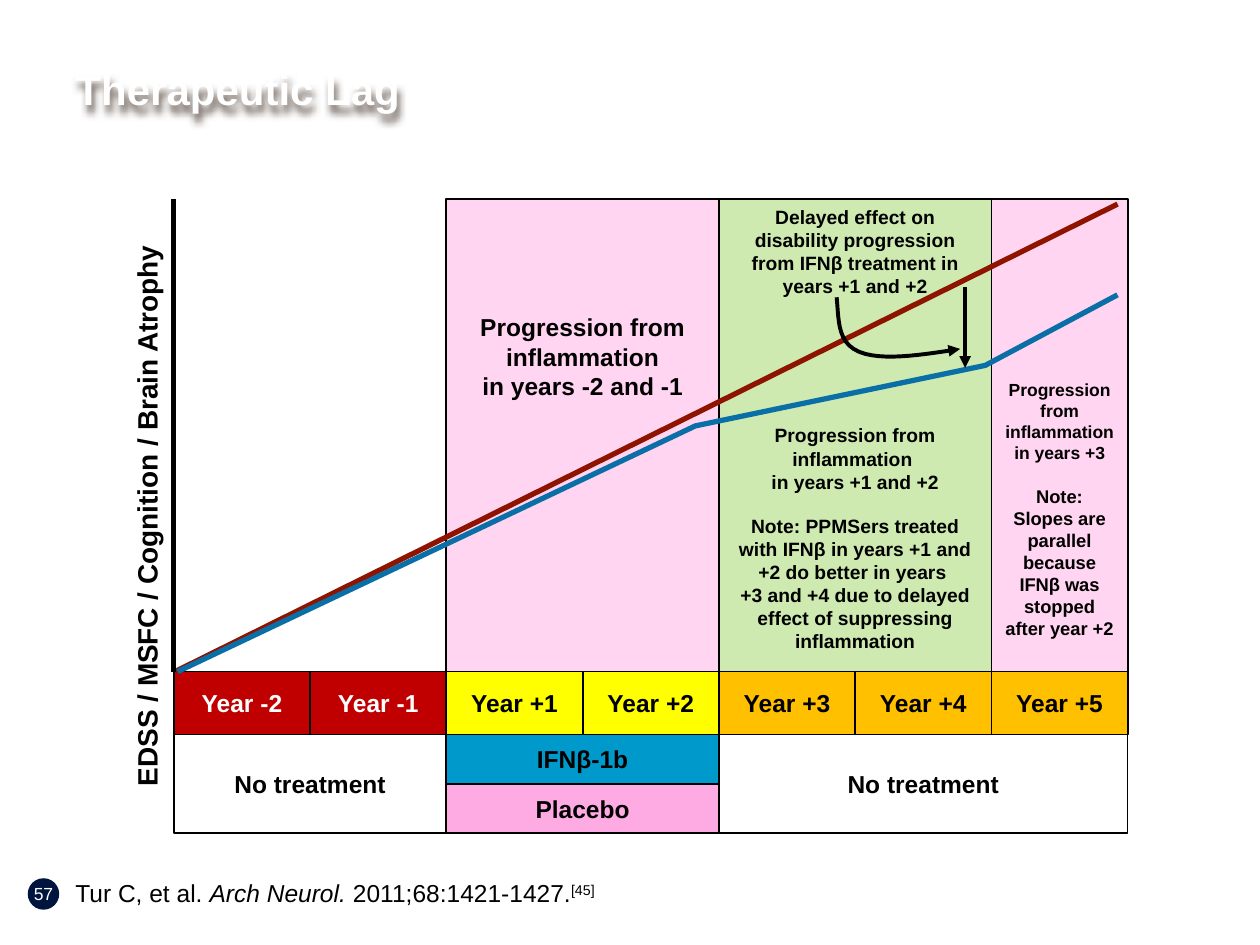
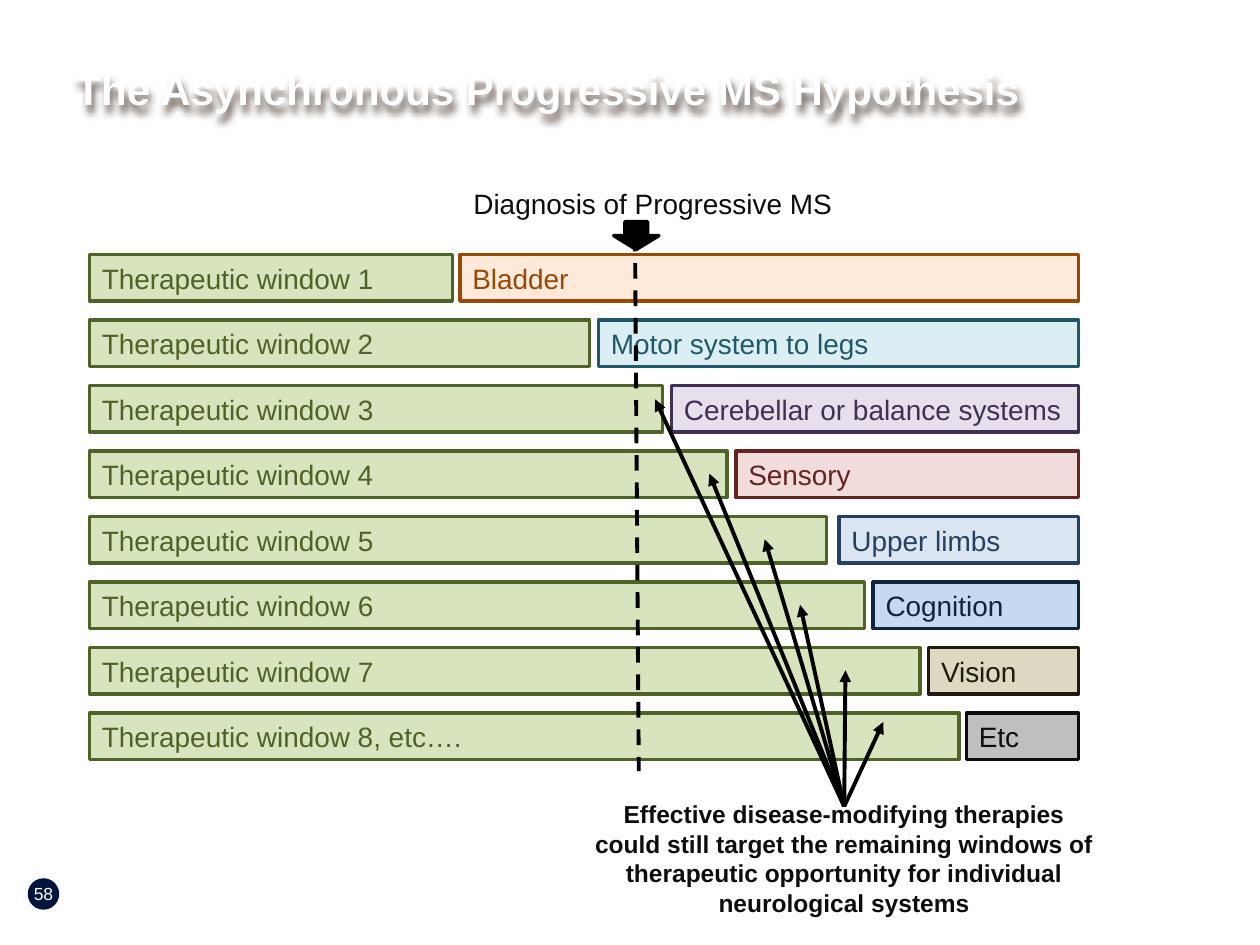
from dataclasses import dataclass

from lxml import etree
from pptx import Presentation
from pptx.dml.color import RGBColor
from pptx.enum.dml import MSO_LINE
from pptx.enum.shapes import MSO_CONNECTOR, MSO_SHAPE
from pptx.enum.text import MSO_ANCHOR, PP_ALIGN
from pptx.oxml.ns import qn
from pptx.util import Inches, Pt

RECTANGLE, OVAL, DOWN_ARROW = MSO_SHAPE.RECTANGLE, MSO_SHAPE.OVAL, MSO_SHAPE.DOWN_ARROW
STRAIGHT = MSO_CONNECTOR.STRAIGHT
DASH = MSO_LINE.DASH
LEFT, CENTER = PP_ALIGN.LEFT, PP_ALIGN.CENTER
TOP, MIDDLE = MSO_ANCHOR.TOP, MSO_ANCHOR.MIDDLE
TITLE_ONLY = 5


@dataclass(frozen=True)
class Theme:
    font: str = "Arial"
    black: str = "000000"
    white: str = "FFFFFF"
    ink: str = "0D0D0D"
    badge: str = "00153E"
    title_shadow: str = "4A3A30"
    before: str = "C00000"
    treated: str = "FFFF00"
    after: str = "FFC000"
    interferon: str = "0099CC"
    placebo: str = "FFABE3"
    inflammation: str = "FFD5F1"
    delayed: str = "CEEAB0"
    untreated_course: str = "8E1400"
    treated_course: str = "0A6FA7"
    window_fill: str = "D7E4BD"
    window_edge: str = "4F6228"
    title_size: float = 24
    large: float = 16
    medium: float = 14
    note: float = 11
    narrow_note: float = 10.5
    small: float = 10
    arrow_width: float = 2.25
    course_width: float = 3


THEME = Theme()

AXIS_LEFT, CHART_TOP, YEARS_TOP = 1.38, 1.58, 5.33
YEAR_WIDTH = 7.57 / 7
YEAR_HEIGHT, TREATMENT_HEIGHT = 0.5, 0.78
YEARS = [("Year -2", THEME.before), ("Year -1", THEME.before),
         ("Year +1", THEME.treated), ("Year +2", THEME.treated),
         ("Year +3", THEME.after), ("Year +4", THEME.after), ("Year +5", THEME.after)]

WINDOW_LEFT, SYSTEM_RIGHT = 0.71, 8.56
ROW_TOP, ROW_STEP, ROW_HEIGHT = 2.02, 0.52, 0.37
WINDOWS = [
    ("Therapeutic window 1", 2.88, "Bladder", 3.65, "FDEADA", "984807"),
    ("Therapeutic window 2", 3.97, "Motor system to legs", 4.75, "DBEEF4", "215968"),
    ("Therapeutic window 3", 4.55, "Cerebellar or balance systems", 5.33, "E6E0EC", "403152"),
    ("Therapeutic window 4", 5.06, "Sensory", 5.84, "F2DCDB", "632523"),
    ("Therapeutic window 5", 5.85, "Upper limbs", 6.66, "DCE6F2", "254061"),
    ("Therapeutic window 6", 6.15, "Cognition", 6.93, "C6D9F1", "0F243E"),
    ("Therapeutic window 7", 6.59, "Vision", 7.37, "DDD9C3", "1E1C11"),
    ("Therapeutic window 8, etc….", 6.9, "Etc", 7.67, "BFBFBF", "0D0D0D"),
]
THERAPY_ORIGIN = (6.7, 6.4)
THERAPY_TARGETS = [(5.2, 3.17), (5.63, 3.76), (6.07, 4.28),
                   (6.35, 4.8), (6.71, 5.32), (7.01, 5.73)]


def rgb(value):
    return RGBColor.from_string(value)


def add_run(paragraph, words, size, color, bold=False, italic=False, raised=False):
    run = paragraph.add_run()
    run.text = words
    font = run.font
    font.name, font.size, font.bold, font.italic = THEME.font, Pt(size), bold, italic
    font.color.rgb = rgb(color)
    if raised:
        run._r.get_or_add_rPr().set("baseline", "30000")


def write(paragraph, words, size, color, bold=False, align=CENTER):
    paragraph.alignment = align
    for index, line in enumerate(words.split("\n")):
        if index:
            paragraph.add_line_break()
        add_run(paragraph, line, size, color, bold)


def add_box(slide, box, fill, edge, edge_width=1, kind=RECTANGLE):
    shape = slide.shapes.add_shape(kind, *map(Inches, box))
    shape.shadow.inherit = False
    shape.fill.solid()
    shape.fill.fore_color.rgb = rgb(fill)
    shape.line.color.rgb = rgb(edge)
    shape.line.width = Pt(edge_width)
    shape.text_frame.word_wrap = True
    return shape


def add_cell(slide, box, words, fill, color=THEME.black):
    cell = add_box(slide, box, fill, THEME.black)
    write(cell.text_frame.paragraphs[0], words, THEME.medium, color, bold=True)


def add_panel(slide, box, fill, top_margin, notes):
    frame = add_box(slide, box, fill, THEME.black).text_frame
    frame.vertical_anchor = TOP
    frame.margin_top = Inches(top_margin)
    for index, (words, size, gap) in enumerate(notes):
        paragraph = frame.add_paragraph() if index else frame.paragraphs[0]
        if gap:
            paragraph.space_before = Pt(gap)
        write(paragraph, words, size, THEME.black, bold=True)


def add_bar(slide, left, top, width, words, fill, edge):
    bar = add_box(slide, (left, top, width, ROW_HEIGHT), fill, edge, 2)
    write(bar.text_frame.paragraphs[0], words, THEME.large, edge, align=LEFT)


def add_label(slide, box, words, size, color, bold=False, anchor=MIDDLE):
    label = slide.shapes.add_textbox(*map(Inches, box))
    frame = label.text_frame
    frame.word_wrap = True
    frame.vertical_anchor = anchor
    write(frame.paragraphs[0], words, size, color, bold)
    return label


def add_arrowhead(shape):
    outline = shape._element.spPr.find(qn("a:ln"))
    etree.SubElement(outline, qn("a:tailEnd"), type="triangle")


def add_line(slide, start, end, color=THEME.black, width=THEME.arrow_width,
             arrow=False, dash=None):
    line = slide.shapes.add_connector(STRAIGHT, *map(Inches, (*start, *end)))
    line.line.color.rgb = rgb(color)
    line.line.width = Pt(width)
    if dash:
        line.line.dash_style = dash
    if arrow:
        add_arrowhead(line)
    etree.SubElement(line._element.spPr, qn("a:effectLst"))


def add_path(slide, points, color, width):
    start, *rest = [(Inches(x), Inches(y)) for x, y in points]
    builder = slide.shapes.build_freeform(*start)
    builder.add_line_segments(rest, close=False)
    path = builder.convert_to_shape()
    path.shadow.inherit = False
    path.fill.background()
    path.line.color.rgb = rgb(color)
    path.line.width = Pt(width)
    return path


def bezier(controls, steps=12):
    a, b, c, d = controls
    for step in range(steps + 1):
        t = step / steps
        u = 1 - t
        yield tuple(u**3 * p + 3 * u * u * t * q + 3 * u * t * t * r + t**3 * s
                    for p, q, r, s in zip(a, b, c, d))


def cast_title_shadow(title):
    title.shadow.inherit = False
    effects = title._element.spPr.find(qn("a:effectLst"))
    shadow = etree.SubElement(effects, qn("a:outerShdw"), blurRad="50800",
                              dist="50800", dir="4200000", algn="tl", rotWithShape="0")
    tint = etree.SubElement(shadow, qn("a:srgbClr"), val=THEME.title_shadow)
    etree.SubElement(tint, qn("a:alpha"), val="80000")


def add_slide(deck, heading, number):
    slide = deck.slides.add_slide(deck.slide_layouts[TITLE_ONLY])
    title = slide.shapes.title
    title.left, title.top, title.width, title.height = map(Inches, (0.5, 0.08, 7.75, 1.25))
    title.text_frame.vertical_anchor = MIDDLE
    write(title.text_frame.paragraphs[0], heading, THEME.title_size, THEME.white,
          bold=True, align=LEFT)
    cast_title_shadow(title)
    badge = add_box(slide, (0.22, 6.97, 0.25, 0.25), THEME.badge, THEME.badge, kind=OVAL)
    badge.line.fill.background()
    frame = badge.text_frame
    frame.word_wrap = False
    frame.margin_left = frame.margin_right = frame.margin_top = frame.margin_bottom = 0
    write(frame.paragraphs[0], number, THEME.small, THEME.white)
    return slide


def add_citation(slide):
    citation = slide.shapes.add_textbox(*map(Inches, (0.5, 6.92, 5.53, 0.34)))
    citation.text_frame.word_wrap = True
    paragraph = citation.text_frame.paragraphs[0]
    add_run(paragraph, "Tur C, et al. ", THEME.medium, THEME.black)
    add_run(paragraph, "Arch Neurol. ", THEME.medium, THEME.black, italic=True)
    add_run(paragraph, "2011;68:1421-1427.", THEME.medium, THEME.black)
    add_run(paragraph, "[45]", THEME.medium, THEME.black, raised=True)


def year_span(first, count, top, height):
    return AXIS_LEFT + first * YEAR_WIDTH, top, count * YEAR_WIDTH, height


def add_timeline(slide):
    for index, (year, fill) in enumerate(YEARS):
        color = THEME.white if fill == THEME.before else THEME.black
        add_cell(slide, year_span(index, 1, YEARS_TOP, YEAR_HEIGHT), year, fill, color)
    top = YEARS_TOP + YEAR_HEIGHT
    half = TREATMENT_HEIGHT / 2
    add_cell(slide, year_span(2, 2, top, half), "IFNβ-1b", THEME.interferon)
    add_cell(slide, year_span(2, 2, top + half, half), "Placebo", THEME.placebo)
    for first, count in ((0, 2), (4, 3)):
        add_cell(slide, year_span(first, count, top, TREATMENT_HEIGHT),
                 "No treatment", THEME.white)


def add_progression_panels(slide):
    height = YEARS_TOP - CHART_TOP
    add_panel(slide, year_span(2, 2, CHART_TOP, height), THEME.inflammation, 0.9, [
        ("Progression from inflammation\nin years -2 and -1", THEME.medium, 0)])
    add_panel(slide, year_span(6, 1, CHART_TOP, height), THEME.inflammation, 1.43, [
        ("Progression from inflammation in years +3", THEME.small, 0),
        ("Note: Slopes are parallel because IFNβ was stopped after year +2",
         THEME.narrow_note, 12.5)])
    add_panel(slide, year_span(4, 2, CHART_TOP, height), THEME.delayed, 0.05, [
        ("Delayed effect on disability progression from IFNβ treatment in years +1 and +2",
         THEME.note, 0),
        ("Progression from inflammation \nin years +1 and +2", THEME.note, 72),
        ("Note: PPMSers treated with IFNβ in years +1 and +2 do better in years \n"
         "+3 and +4 due to delayed effect of suppressing inflammation", THEME.note, 12)])


def add_disease_courses(slide):
    add_line(slide, (8.87, 1.62), (1.39, 5.33), THEME.untreated_course, THEME.course_width)
    add_path(slide, [(1.41, 5.33), (5.52, 3.38), (7.82, 2.9), (8.87, 2.34)],
             THEME.treated_course, THEME.course_width)
    descent = bezier([(6.64, 2.36), (6.66, 2.56), (6.64, 2.75), (6.87, 2.81)])
    approach = bezier([(6.87, 2.81), (7.06, 2.86), (7.36, 2.81), (7.62, 2.77)])
    pointer = add_path(slide, [*descent, *list(approach)[1:]],
                       THEME.black, THEME.arrow_width)
    add_arrowhead(pointer)
    add_line(slide, (7.66, 2.28), (7.66, 2.92), arrow=True)
    add_line(slide, (AXIS_LEFT, CHART_TOP), (AXIS_LEFT, YEARS_TOP), width=THEME.course_width)


def build_therapeutic_lag(deck):
    slide = add_slide(deck, "Therapeutic Lag", "57")
    add_citation(slide)
    add_timeline(slide)
    add_progression_panels(slide)
    add_disease_courses(slide)
    axis_label = add_label(slide, (-1.35, 3.91, 5.03, 0.37),
                           "EDSS / MSFC / Cognition / Brain Atrophy",
                           THEME.large, THEME.black, bold=True, anchor=TOP)
    axis_label.rotation = 270


def build_asynchronous_hypothesis(deck):
    slide = add_slide(deck, "The Asynchronous Progressive MS Hypothesis", "58")
    for row, (window, width, system, left, fill, edge) in enumerate(WINDOWS):
        top = ROW_TOP + row * ROW_STEP
        add_bar(slide, WINDOW_LEFT, top, width, window, THEME.window_fill, THEME.window_edge)
        add_bar(slide, left, top, SYSTEM_RIGHT - left, system, fill, edge)
    add_line(slide, (5.04, 1.87), (5.07, 6.12), dash=DASH)
    add_label(slide, (3.29, 1.43, 3.78, 0.37), "Diagnosis of Progressive MS",
              THEME.large, THEME.ink)
    add_label(slide, (4.57, 6.4, 4.26, 0.82),
              "Effective disease-modifying therapies could still target the remaining windows "
              "of therapeutic opportunity for individual neurological systems",
              THEME.medium, THEME.ink, bold=True)
    for target in THERAPY_TARGETS:
        add_line(slide, THERAPY_ORIGIN, target, arrow=True)
    add_box(slide, (4.87, 1.76, 0.36, 0.22), THEME.black, THEME.black, 2, DOWN_ARROW)


def main():
    deck = Presentation()
    deck.slide_width, deck.slide_height = Inches(10), Inches(7.5)
    build_therapeutic_lag(deck)
    build_asynchronous_hypothesis(deck)
    deck.save("out.pptx")


if __name__ == "__main__":
    main()
